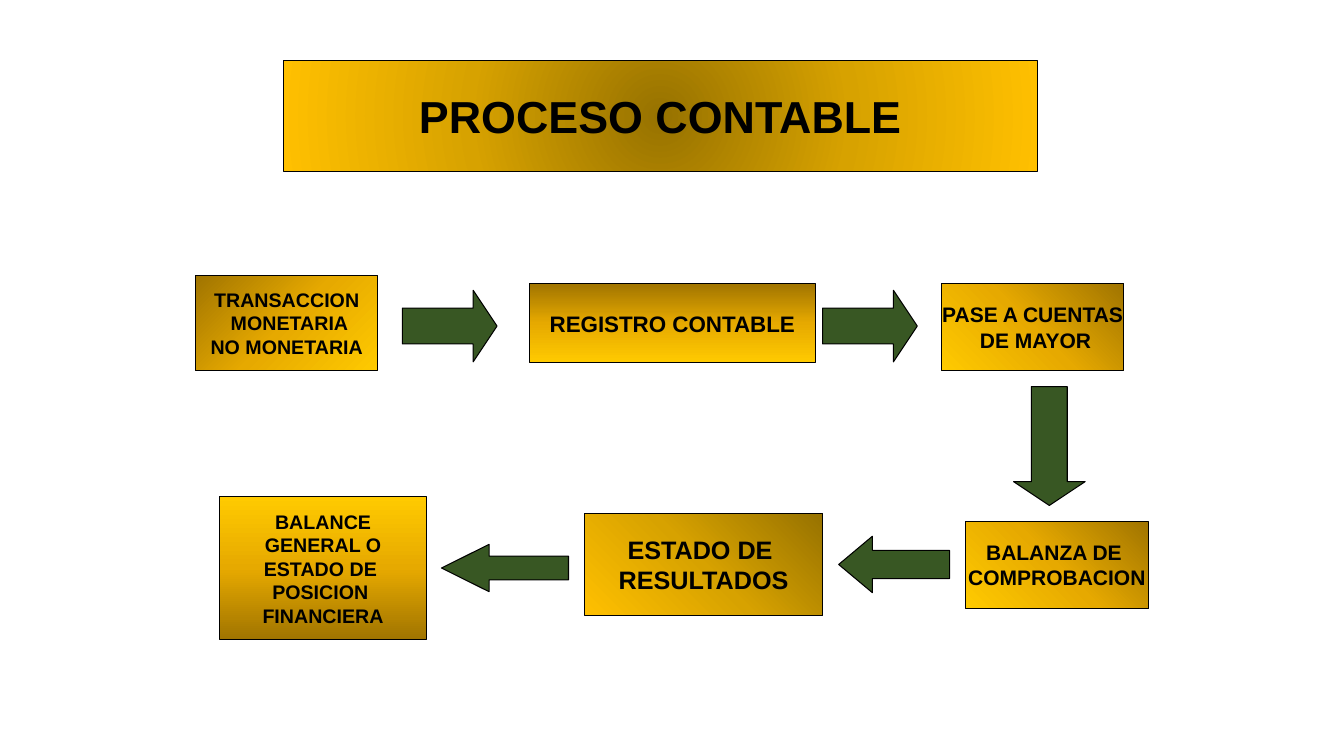
from dataclasses import dataclass, field
from typing import NamedTuple, Optional

from lxml import etree
from pptx import Presentation, util as u
from pptx.dml.color import RGBColor
from pptx.enum import shapes, text
from pptx.oxml.ns import qn


@dataclass(frozen=True)
class Theme:
    font: str = "Arial"
    ink: str = "000000"
    arrow: str = "385723"
    gold: tuple = ("A07400", "E6A900", "FFCA00")
    amber: tuple = ("977200", "D7A200", "FFC000")
    line: float = 0.75
    sizes: dict = field(default_factory=lambda: {
        "title": 32, "large": 18, "medium": 16, "small": 15, "tiny": 14})


class Area(NamedTuple):
    """Left, top, width and height in percent of the slide."""
    left: float
    top: float
    width: float
    height: float


class Step(NamedTuple):
    words: str
    area: Area
    size: str
    angle: Optional[int] = None
    focus: Optional[tuple] = None


class Arrow(NamedTuple):
    area: Area
    turn: int
    head: float


THEME = Theme()
CENTRE, BOTTOM_LEFT = (50, 50, 50, 50), (100, 0, 0, 100)
BOX_W, BOX_H = 13.58, 11.6
TOP_ROW, ARROW_ROW = 37.47, 38.4
ARROW_W, ARROW_H = 7.05, 9.47

TITLE = Step("PROCESO CONTABLE", Area(21.08, 8, 56.1, 14.67), "title", focus=CENTRE)
STEPS = [
    Step("TRANSACCION\n MONETARIA\nNO MONETARIA", Area(14.55, 36.4, BOX_W, 12.67), "tiny", 45),
    Step("REGISTRO CONTABLE", Area(39.38, TOP_ROW, 21.3, 10.53), "medium", 90),
    Step("PASE A CUENTAS\n DE MAYOR", Area(70.05, TOP_ROW, BOX_W, BOX_H), "small", 135),
    Step("BALANZA DE \nCOMPROBACION", Area(71.85, 68.93, BOX_W, BOX_H), "small", 135),
    Step("ESTADO DE \nRESULTADOS", Area(43.5, 67.87, 17.7, 13.6), "large", focus=BOTTOM_LEFT),
    Step("BALANCE\nGENERAL O\nESTADO DE \nPOSICION \nFINANCIERA",
         Area(16.35, 65.73, 15.38, 18.93), "tiny", 270),
]
ARROWS = [
    Arrow(Area(29.93, ARROW_ROW, ARROW_W, ARROW_H), 0, 0.333),
    Arrow(Area(61.2, ARROW_ROW, ARROW_W, ARROW_H), 0, 0.333),
    Arrow(Area(73.65, 54.27, 8.85, ARROW_H), 90, 0.333),
    Arrow(Area(62.4, 70.93, 8.25, 7.47), 180, 0.596),
    Arrow(Area(32.85, 72, 9.45, 6.27), 180, 1.004),
]


def apply(target, values: dict) -> None:
    for name, value in values.items():
        setattr(target, name, value)


def to_frame(deck, area: Area) -> dict:
    """Turn percentages into lengths on the slide."""
    totals = (deck.slide_width, deck.slide_height) * 2
    return {name: round(total * share / 100)
            for (name, share), total in zip(area._asdict().items(), totals)}


def outline(shape) -> None:
    shape.line.color.rgb = RGBColor.from_string(THEME.ink)
    shape.line.width = u.Pt(THEME.line)


def shade(shape, step: Step) -> None:
    """Fill with three even stops, along an angle or around a focus."""
    shape.fill.gradient()
    gradient = shape._element.spPr.find(qn("a:gradFill"))
    for child in list(gradient):
        gradient.remove(child)
    stops = etree.SubElement(gradient, qn("a:gsLst"))
    for index, colour in enumerate(THEME.amber if step.focus else THEME.gold):
        stop = etree.SubElement(stops, qn("a:gs"), {"pos": str(index * 50000)})
        etree.SubElement(stop, qn("a:srgbClr"), {"val": colour})
    if step.focus:
        radial = etree.SubElement(gradient, qn("a:path"), {"path": "circle"})
        sides = {side: str(share * 1000) for side, share in zip("ltrb", step.focus)}
        etree.SubElement(radial, qn("a:fillToRect"), sides)
    else:
        etree.SubElement(gradient, qn("a:lin"),
                         {"ang": str(step.angle * 60000), "scaled": "0"})


def dress_box(deck, box, step: Step) -> None:
    """Place, colour and label a box."""
    apply(box, to_frame(deck, step.area))
    shade(box, step)
    outline(box)
    frame = box.text_frame
    frame.text = step.words
    apply(frame, {"word_wrap": False, "auto_size": text.MSO_AUTO_SIZE.NONE,
                  "vertical_anchor": text.MSO_ANCHOR.MIDDLE})
    for para in frame.paragraphs:
        para.alignment = text.PP_ALIGN.CENTER
        for span in para.runs:
            apply(span.font, {"name": THEME.font, "bold": True,
                              "size": u.Pt(THEME.sizes[step.size])})
            span.font.color.rgb = RGBColor.from_string(THEME.ink)


def add_preset(deck, page, kind, area: Area):
    shape = page.shapes.add_shape(kind, **to_frame(deck, area))
    shape.shadow.inherit = False
    return shape


def draw_arrow(deck, page, arrow: Arrow) -> None:
    shape = add_preset(deck, page, shapes.MSO_SHAPE.RIGHT_ARROW, arrow.area)
    shape.rotation = arrow.turn
    shape.adjustments[1] = arrow.head
    shape.fill.solid()
    shape.fill.fore_color.rgb = RGBColor.from_string(THEME.arrow)
    outline(shape)


def main() -> None:
    deck = Presentation()
    apply(deck, {"slide_width": u.Inches(13.33), "slide_height": u.Inches(7.5)})
    page = deck.slides.add_slide(deck.slide_layouts.get_by_name("Title Only"))
    dress_box(deck, page.shapes.title, TITLE)
    for step in STEPS:
        dress_box(deck, add_preset(deck, page, shapes.MSO_SHAPE.RECTANGLE, step.area), step)
    for arrow in ARROWS:
        draw_arrow(deck, page, arrow)
    deck.save("out.pptx")


if __name__ == "__main__":
    main()
